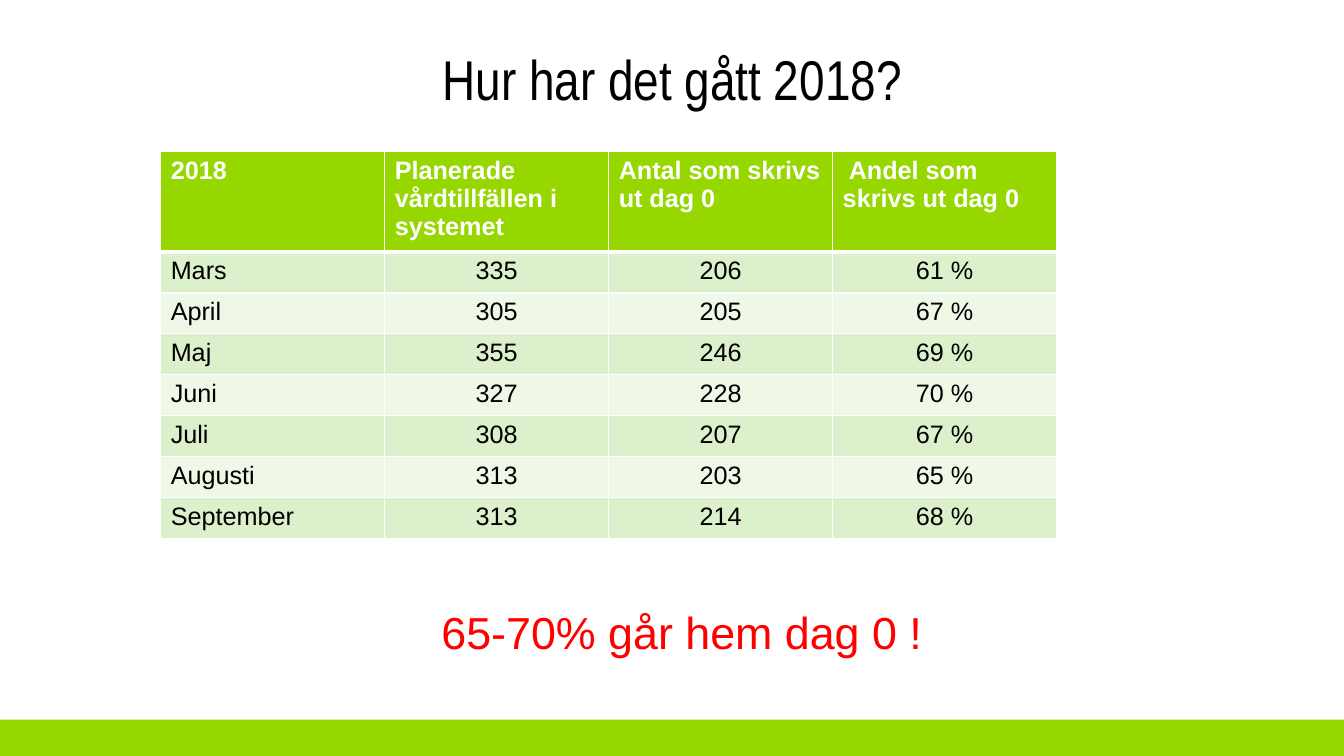
from lxml import etree
from pptx import Presentation
from pptx import util as u
from pptx.dml.color import RGBColor
from pptx.enum import shapes, text
from pptx.oxml.ns import qn

COLORS = {
    "green": "97D700", "band": "DDF0CC", "pale": "EFF8E7",
    "white": "FFFFFF", "black": "000000", "red": "FF0000",
}
HEADER = ["2018", "Planerade vårdtillfällen i systemet",
          "Antal som skrivs ut dag 0", " Andel som skrivs ut dag 0"]
MONTHS = [
    ["Mars", "335", "206", "61 %"],
    ["April", "305", "205", "67 %"],
    ["Maj", "355", "246", "69 %"],
    ["Juni", "327", "228", "70 %"],
    ["Juli", "308", "207", "67 %"],
    ["Augusti", "313", "203", "65 %"],
    ["September", "313", "214", "68 %"],
]
HEADER_HEIGHT = 67.2
MONTH_HEIGHT = 29.2


def color(name):
    return RGBColor.from_string(COLORS[name])


def fill_solid(item, name):
    item.fill.solid()
    item.fill.fore_color.rgb = color(name)


def write(frame, words, ink, align=text.PP_ALIGN.LEFT, **font):
    para = frame.paragraphs[0]
    para.alignment = align
    span = para.add_run()
    span.text = words
    for name, value in font.items():
        setattr(span.font, name, value)
    span.font.color.rgb = color(ink)
    return para


def add_text(page, box, words, ink, anchor, **style):
    frame = page.shapes.add_textbox(*map(u.Pt, box)).text_frame
    frame.word_wrap = True
    frame.vertical_anchor = anchor
    return write(frame, words, ink, **style)


def add_title(page, box):
    para = add_text(page, box, "Hur har det gått 2018?", "black",
                    text.MSO_ANCHOR.MIDDLE, align=text.PP_ALIGN.CENTER,
                    name="Arial Narrow", size=u.Pt(40))
    para.line_spacing = 0.9


def set_borders(cell, widths):
    properties = cell._tc.get_or_add_tcPr()
    for side, width in widths.items():
        line = etree.SubElement(properties, qn(f"a:ln{side}"), w=str(u.Pt(width)))
        paint = etree.SubElement(line, qn("a:solidFill"))
        etree.SubElement(paint, qn("a:srgbClr"), val=COLORS["white"])


def add_month_table(page, box):
    rows = [HEADER] + MONTHS
    table = page.shapes.add_table(len(rows), len(HEADER), *map(u.Pt, box)).table
    for column in table.columns:
        column.width = u.Pt(box[2] / len(HEADER))
    for r, values in enumerate(rows):
        is_header = r == 0
        table.rows[r].height = u.Pt(HEADER_HEIGHT if is_header else MONTH_HEIGHT)
        fill = "green" if is_header else ("band" if r % 2 else "pale")
        ink = "white" if is_header else "black"
        for c, value in enumerate(values):
            cell = table.cell(r, c)
            centred = c > 0 and not is_header
            set_borders(cell, {"L": 1, "R": 1, "T": 3 if r == 1 else 1,
                               "B": 3 if is_header else 1})
            fill_solid(cell, fill)
            write(cell.text_frame, value, ink,
                  align=text.PP_ALIGN.CENTER if centred else text.PP_ALIGN.LEFT,
                  name="Arial", size=u.Pt(18), bold=is_header)


def add_conclusion(page, box):
    add_text(page, box, "65-70% går hem dag 0 !", "red", text.MSO_ANCHOR.TOP,
             name="Arial", size=u.Pt(32))


def add_footer_band(page, box):
    band = page.shapes.add_shape(shapes.MSO_SHAPE.RECTANGLE, *map(u.Pt, box))
    band.shadow.inherit = False
    fill_solid(band, "green")
    band.line.fill.background()


def main():
    deck = Presentation()
    deck.slide_width, deck.slide_height = u.Pt(960), u.Pt(540)
    page = deck.slides.add_slide(deck.slide_layouts[6])
    add_footer_band(page, (0, 514, 960, 26))
    add_title(page, (68, 33, 824, 51))
    add_month_table(page, (114.8, 108, 640, HEADER_HEIGHT + len(MONTHS) * MONTH_HEIGHT))
    add_conclusion(page, (308.2, 428.4, 399.6, 46))
    deck.save("out.pptx")


if __name__ == "__main__":
    main()
